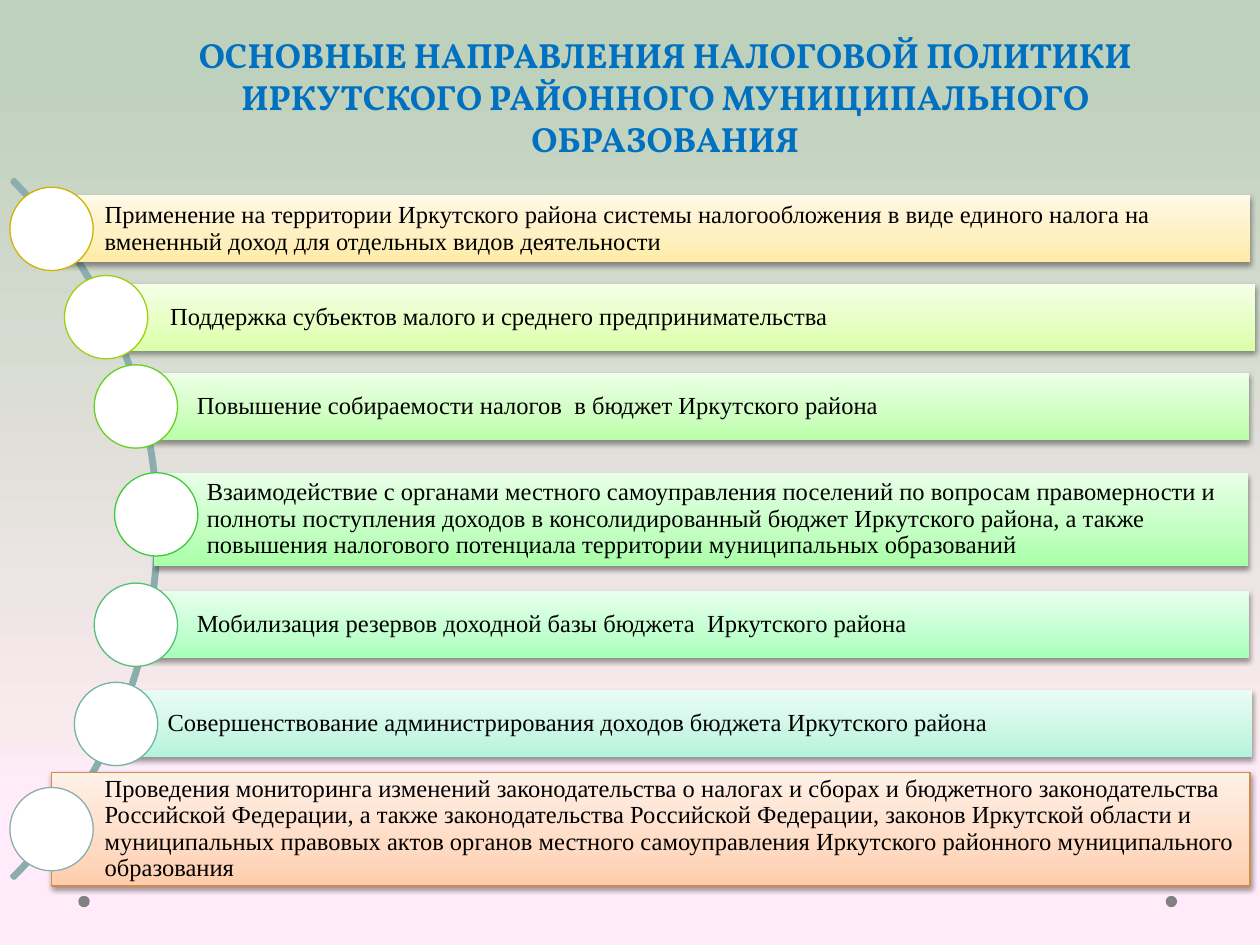
from collections import namedtuple

from lxml.etree import SubElement
from pptx import Presentation
from pptx.dml.color import RGBColor
from pptx.enum.shapes import MSO_SHAPE as Shape
from pptx.enum.text import MSO_ANCHOR as Anchor, MSO_AUTO_SIZE as AutoSize, PP_ALIGN as Align
from pptx.oxml.ns import qn
from pptx.util import Cm, Pt

# Lengths in centimetres
Box = namedtuple("Box", "left top width height")
Row = namedtuple("Row", "box marker_left marker_shift bar_colors bar_line marker_line text")

MARKER_SIZE = 1.68
BAR_STOPS = (0, 35, 100)
BACKGROUND = [(17, "FFEBFA"), (23, "F9EAEE"), (93, "BED1BC")]
TITLE = ("ОСНОВНЫЕ НАПРАВЛЕНИЯ НАЛОГОВОЙ ПОЛИТИКИ ИРКУТСКОГО РАЙОННОГО "
         "МУНИЦИПАЛЬНОГО ОБРАЗОВАНИЯ")

ROWS = [
    Row(Box(1.04, 3.94, 24.16, 1.35), 0.2, 0, ("FFEBA5", "FFF0BF", "FFF9E7"), None, "CCB400",
        "Применение на территории Иркутского района системы налогообложения в виде "
        "единого налога на вмененный доход для отдельных видов деятельности"),
    Row(Box(2.36, 5.72, 22.94, 1.35), 1.3, 0, ("DBFFA6", "E5FFC0", "F5FFE7"), None, "A1CF0F",
        "Поддержка субъектов малого и среднего предпринимательства"),
    Row(Box(2.9, 7.52, 22.28, 1.35), 1.9, 0, ("BAFFA7", "CEFFC1", "ECFFE7"), None, "67D021",
        "Повышение собираемости налогов  в бюджет Иркутского района"),
    Row(Box(3.1, 9.53, 22.07, 1.88), 2.31, -0.1, ("A9FFA7", "C2FFC1", "E8FFE7"), None, "3ECB38",
        "Взаимодействие с органами местного самоуправления поселений по вопросам "
        "правомерности и полноты поступления доходов в консолидированный бюджет "
        "Иркутского района, а также повышения налогового потенциала территории "
        "муниципальных образований"),
    Row(Box(2.9, 11.92, 22.28, 1.35), 1.9, 0, ("A6FFBA", "C0FFCE", "E7FFEC"), None, "56BF77",
        "Мобилизация резервов доходной базы бюджета  Иркутского района"),
    Row(Box(2.31, 13.92, 22.94, 1.35), 1.5, 0, ("B4F3DB", "CAF6E5", "EAFCF5"), None, "72B59F",
        "Совершенствование администрирования доходов бюджета Иркутского района"),
    Row(Box(1.04, 15.57, 24.16, 2.29), 0.2, 0, ("FFCDAC", "FFDBC4", "FFF1E8"), "D08D44", "8CADAE",
        "Проведения мониторинга изменений законодательства о налогах и сборах и "
        "бюджетного законодательства Российской Федерации, а также законодательства "
        "Российской Федерации, законов Иркутской области и муниципальных правовых актов "
        "органов местного самоуправления Иркутского районного муниципального образования"),
]


def color(value):
    return RGBColor.from_string(value)


def set_gradient(fill, element, stops):
    """Fill from bottom to top with any number of (percent, colour) stops."""
    fill.gradient()
    fill.gradient_angle = 90
    stop_list = element.xpath(".//a:gsLst")[0]
    for stop in list(stop_list):
        stop_list.remove(stop)
    for percent, value in stops:
        stop = SubElement(stop_list, qn("a:gs"), pos=str(percent * 1000))
        SubElement(stop, qn("a:srgbClr"), val=value)


def add_drop_shadow(shape):
    effects = shape._element.spPr.find(qn("a:effectLst"))
    shadow = SubElement(effects, qn("a:outerShdw"), blurRad=str(Pt(3.1)), dist=str(Pt(1.6)),
                        dir="5400000", rotWithShape="0")
    shadow_color = SubElement(shadow, qn("a:srgbClr"), val="000000")
    SubElement(shadow_color, qn("a:alpha"), val="38000")


def add_shape(slide, kind, box, fill=None, line=None, line_width=0.75):
    shape = slide.shapes.add_shape(kind, *map(Cm, box))
    shape.shadow.inherit = False
    if fill:
        shape.fill.solid()
        shape.fill.fore_color.rgb = color(fill)
    else:
        shape.fill.background()
    if line:
        shape.line.color.rgb = color(line)
        shape.line.width = Pt(line_width)
    else:
        shape.line.fill.background()
    return shape


def format_text(paragraph, name, size, value, bold=False):
    for run in paragraph.runs:
        run.font.name = name
        run.font.size = Pt(size)
        run.font.bold = bold
        run.font.color.rgb = color(value)


def add_title(slide, box):
    title = slide.shapes.add_textbox(*map(Cm, box))
    frame = title.text_frame
    frame.word_wrap = True
    frame.auto_size = AutoSize.SHAPE_TO_FIT_TEXT
    frame.text = TITLE
    paragraph = frame.paragraphs[0]
    paragraph.alignment = Align.CENTER
    format_text(paragraph, "Vollkorn", 20, "0070C0", bold=True)


def add_row(slide, row):
    # Bar with its text
    bar = add_shape(slide, Shape.RECTANGLE, row.box, line=row.bar_line)
    set_gradient(bar.fill, bar._element, zip(BAR_STOPS, row.bar_colors))
    add_drop_shadow(bar)
    frame = bar.text_frame
    frame.word_wrap = True
    frame.vertical_anchor = Anchor.MIDDLE
    frame.margin_left = Cm(1.07)
    frame.margin_top = frame.margin_right = frame.margin_bottom = Cm(0.1)
    frame.text = row.text
    paragraph = frame.paragraphs[0]
    paragraph.alignment = Align.LEFT
    paragraph.line_spacing = 0.9
    format_text(paragraph, "Times New Roman", 14, "000000")

    # Round marker, centred on the bar
    marker_top = row.box.top + (row.box.height - MARKER_SIZE) / 2 + row.marker_shift
    marker = Box(row.marker_left, marker_top, MARKER_SIZE, MARKER_SIZE)
    add_shape(slide, Shape.OVAL, marker, "FFFFFF", row.marker_line)


def add_directions(slide, arc_box):
    # Arc behind the markers
    arc = add_shape(slide, Shape.BLOCK_ARC, arc_box, line="8CADAE", line_width=2.25)
    for index, value in enumerate((189, 27, 0.003)):
        arc.adjustments[index] = value
    for row in ROWS:
        add_row(slide, row)


def main():
    presentation = Presentation()
    presentation.slide_width = Cm(25.4)
    presentation.slide_height = Cm(19.05)
    slide = presentation.slides.add_slide(presentation.slide_layouts[6])
    set_gradient(slide.background.fill, slide._element, BACKGROUND)

    # Dots at the foot
    for left in (23.5, 1.58):
        add_shape(slide, Shape.OVAL, Box(left, 18.06, 0.23, 0.23), "808080")

    add_directions(slide, Box(-16.71, 0.71, 19.91, 19.91))
    add_title(slide, Box(3.51, 0.56, 19.81, 2.82))
    presentation.save("out.pptx")


if __name__ == "__main__":
    main()
